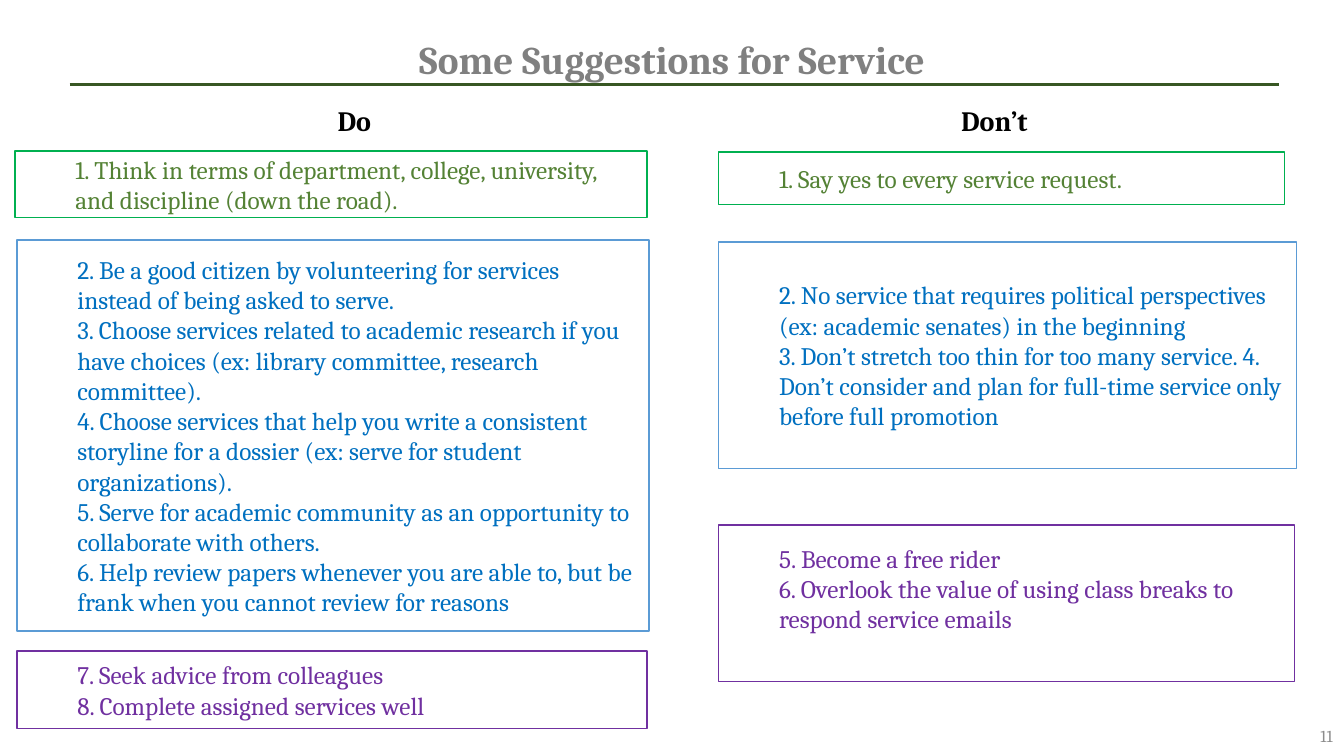
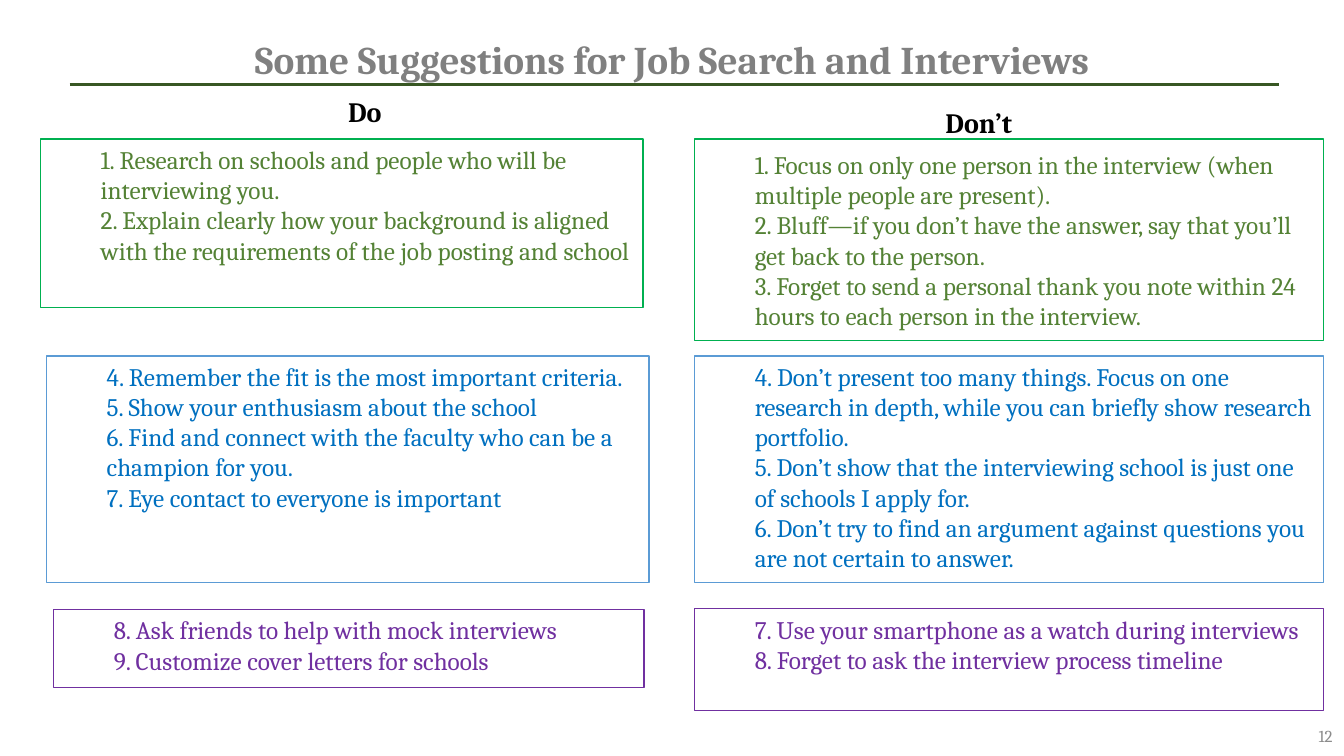
from dataclasses import dataclass

from lxml import etree
from pptx import Presentation
from pptx.dml.color import RGBColor
from pptx.enum import shapes, text
from pptx.util import Pt


@dataclass(frozen=True)
class Theme:
    font: str = "Cambria"
    title: str = "808080"
    rule: str = "385723"
    heading: str = "000000"
    number: str = "8C8C8C"
    title_size: int = 28
    heading_size: int = 20
    body_size: int = 18
    number_size: int = 12


THEME = Theme()
# Box styles: (outline, text colour)
GREEN = ("00B050", "548235")
BLUE = ("5B9BD5", "0070C0")
PURPLE = ("7030A0", "7030A0")

SLIDE_SIZE = (960, 540)
TITLE_AT = (48, 12.2, 864, 50.4)
RULE = (49.7, 60.5, 913.7)  # left, top, right
NUMBER_AT = (743, 511.2, 216, 28.8)
INDENT = 36
FIRST_NUMBER = 11

# Headings: (text, place). Boxes: style, place, lines, optional anchor, top inset, line width.
SLIDES = [
    {
        "title": "Some Suggestions for Service",
        "headings": [
            ("Do", (27.4, 73.4, 451.4, 36.7)),
            ("Don’t", (496.1, 73.4, 428.4, 28.8)),
        ],
        "boxes": [
            {"style": GREEN, "at": (10.8, 108, 451.4, 47.5), "lines": [
                "1. Think in terms of department, college, university, and discipline (down the road).",
            ]},
            {"style": GREEN, "at": (513.4, 108.7, 403.9, 37.4), "lines": [
                "1. Say yes to every service request.",
            ]},
            {"style": BLUE, "at": (12.2, 171.4, 451.4, 279.4), "lines": [
                "2. Be a good citizen by volunteering for services instead of being asked to serve.",
                "3. Choose services related to academic research if you have choices "
                "(ex: library committee, research committee).",
                "4. Choose services that help you write a consistent storyline for a dossier "
                "(ex: serve for student organizations).",
                "5. Serve for academic community as an opportunity to collaborate with others.",
                "6. Help review papers whenever you are able to, but be frank when you cannot "
                "review for reasons",
            ]},
            {"style": BLUE, "at": (513.4, 172.8, 412.6, 162), "lines": [
                "2. No service that requires political perspectives (ex: academic senates) "
                "in the beginning",
                "3. Don’t stretch too thin for too many service. 4. Don’t consider and plan "
                "for full-time service only before full promotion",
            ]},
            {"style": PURPLE, "at": (12.2, 465.1, 450, 55.4), "lines": [
                "7. Seek advice from colleagues",
                "8. Complete assigned services well",
            ]},
            {"style": PURPLE, "at": (513.4, 375.1, 411.1, 111.6), "anchor": "top",
             "inset": 12.6, "lines": [
                 "5. Become a free rider",
                 "6. Overlook the value of using class breaks to respond service emails",
             ]},
        ],
    },
    {
        "title": "Some Suggestions for Job Search and Interviews",
        "headings": [
            ("Do", (57.6, 67, 406.1, 25.9)),
            ("Don’t", (496.1, 74.2, 406.1, 30.2)),
        ],
        "boxes": [
            {"style": GREEN, "at": (28.8, 99.4, 430.6, 120.2), "anchor": "top", "lines": [
                "1. Research on schools and people who will be interviewing you.",
                "2. Explain clearly how your background is aligned with the requirements "
                "of the job posting and school",
            ]},
            {"style": GREEN, "at": (496.1, 99.4, 449.3, 144), "lines": [
                "1. Focus on only one person in the interview (when multiple people are present).",
                "2. Bluff—if you don’t have the answer, say that you’ll get back to the person.",
                "3. Forget to send a personal thank you note within 24 hours to each person "
                "in the interview.",
            ]},
            {"style": BLUE, "at": (33.1, 254.2, 430.6, 162), "anchor": "top", "lines": [
                "4. Remember the fit is the most important criteria.",
                "5. Show your enthusiasm about the school",
                "6. Find and connect with the faculty who can be a champion for you.",
                "7. Eye contact to everyone is important",
            ]},
            {"style": BLUE, "at": (496.1, 254.2, 449.3, 162), "anchor": "top", "lines": [
                "4. Don’t present too many things. Focus on one research in depth, while you "
                "can briefly show research portfolio.",
                "5. Don’t show that the interviewing school is just one of schools I apply for.",
                "6. Don’t try to find an argument against questions you are not certain to answer.",
            ]},
            {"style": PURPLE, "at": (38.2, 435.6, 421.9, 55.4), "anchor": "top", "lines": [
                "8. Ask friends to help with mock interviews",
                "9. Customize cover letters for schools",
            ]},
            {"style": PURPLE, "at": (496.1, 434.9, 449.3, 72.7), "anchor": "top",
             "width": 0.75, "lines": [
                 "7. Use your smartphone as a watch during interviews",
                 "8. Forget to ask the interview process timeline",
             ]},
        ],
    },
]


def points(values):
    return [Pt(v) for v in values]


def rgb(code):
    return RGBColor.from_string(code)


def write(sp, lines, *, size, color, bold=False, align="LEFT", anchor="top",
          inset=3.6, indent=0, before=0, spacing=None):
    """Fill a shape with one paragraph per line, all in the same format."""
    tf = sp.text_frame
    tf.word_wrap = True
    tf.auto_size = text.MSO_AUTO_SIZE.NONE
    tf.vertical_anchor = getattr(text.MSO_ANCHOR, anchor.upper())
    tf.margin_left = tf.margin_right = Pt(7.2)
    tf.margin_top, tf.margin_bottom = Pt(inset), Pt(3.6)
    for i, line in enumerate(lines):
        p = tf.add_paragraph() if i else tf.paragraphs[0]
        p.alignment = getattr(text.PP_ALIGN, align)
        p.space_before = Pt(before)
        if spacing:
            p.line_spacing = spacing
        if indent:
            p.level = 1
            pPr = p._p.get_or_add_pPr()
            pPr.set("marL", str(Pt(indent)))
            pPr.set("indent", "0")
        r = p.add_run()
        r.text = line
        r.font.name, r.font.size, r.font.bold = THEME.font, Pt(size), bold
        r.font.color.rgb = rgb(color)


def add_frame(slide, title, number):
    """Add what every slide shares: title, rule and page number."""
    sp = slide.shapes.title
    sp.left, sp.top, sp.width, sp.height = points(TITLE_AT)
    write(sp, [title], size=THEME.title_size, color=THEME.title, bold=True,
          align="CENTER", anchor="bottom")

    left, top, right = points(RULE)
    rule = slide.shapes.add_connector(shapes.MSO_CONNECTOR.STRAIGHT, left, top, right, top)
    rule.line.color.rgb = rgb(THEME.rule)
    rule.line.width = Pt(2)
    spPr = rule._element.spPr
    etree.SubElement(spPr, spPr.tag.replace("}spPr", "}effectLst").replace(
        "presentationml", "drawingml").replace("2006/main", "2006/main"))

    sp = slide.shapes.add_textbox(*points(NUMBER_AT))
    write(sp, [str(number)], size=THEME.number_size, color=THEME.number,
          align="RIGHT", anchor="middle")


def add_box(slide, style, at, lines, anchor="middle", inset=3.6, width=1):
    outline, color = style
    sp = slide.shapes.add_shape(shapes.MSO_SHAPE.RECTANGLE, *points(at))
    sp.shadow.inherit = False
    sp.fill.background()
    sp.line.color.rgb = rgb(outline)
    sp.line.width = Pt(width)
    write(sp, lines, size=THEME.body_size, color=color, anchor=anchor,
          inset=inset, indent=INDENT)


def main():
    prs = Presentation()
    prs.slide_width, prs.slide_height = points(SLIDE_SIZE)
    title_only = prs.slide_layouts[5]
    for number, content in enumerate(SLIDES, FIRST_NUMBER):
        slide = prs.slides.add_slide(title_only)
        add_frame(slide, content["title"], number)
        for label, at in content["headings"]:
            write(slide.shapes.add_textbox(*points(at)), [label],
                  size=THEME.heading_size, color=THEME.heading, bold=True,
                  align="CENTER", before=10, spacing=0.9)
        for box in content["boxes"]:
            add_box(slide, **box)
    prs.save("out.pptx")


if __name__ == "__main__":
    main()
